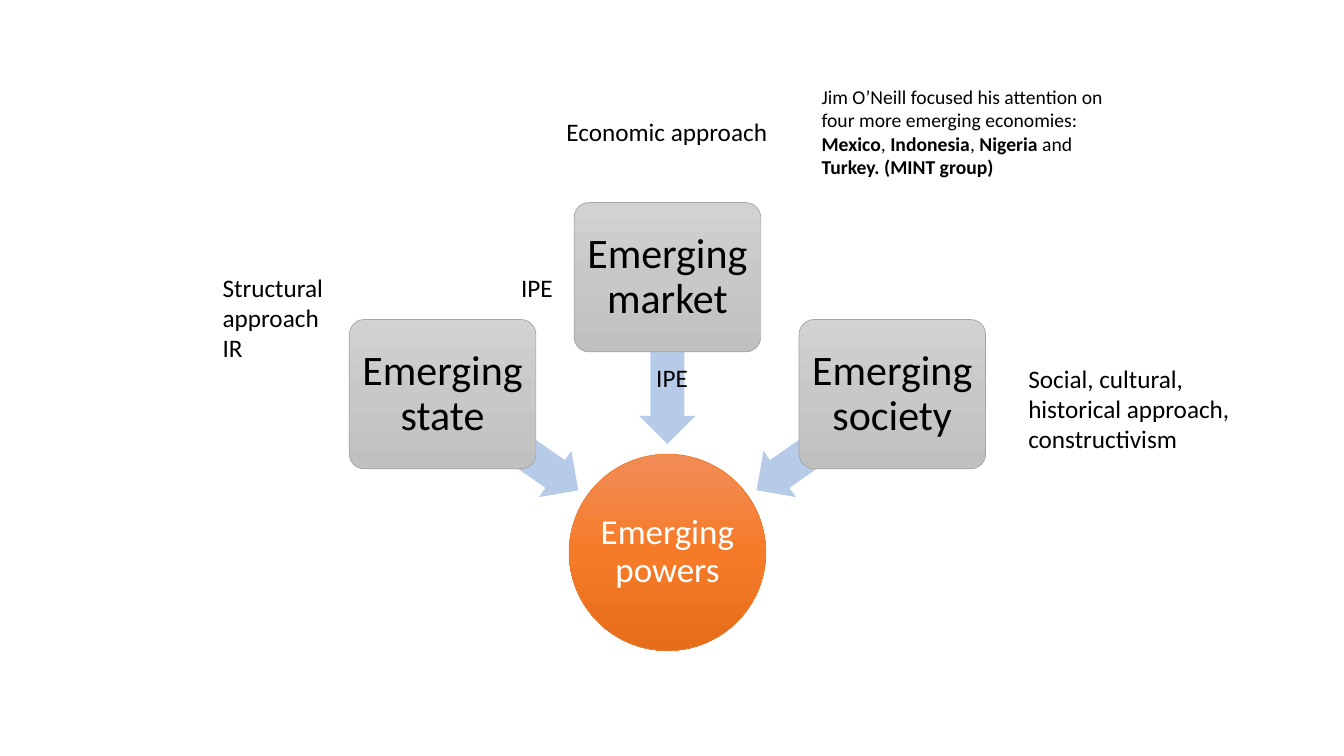
from copy import deepcopy

from pptx import Presentation
from pptx.dml.color import RGBColor
from pptx.enum.shapes import MSO_SHAPE as SHAPE
from pptx.enum.text import MSO_ANCHOR as ANCHOR, MSO_AUTO_SIZE as AUTO_SIZE, PP_ALIGN as ALIGN
from pptx.oxml.ns import qn
from pptx.util import Inches, Pt


def rgb(value):
    return RGBColor.from_string(value)


def add_text(p, text, size=18, color="000000", bold=False, font="Calibri"):
    r = p.add_run()
    r.text = text
    r.font.name = font
    r.font.size = Pt(size)
    r.font.bold = bold
    r.font.color.rgb = rgb(color)


class SlideBuilder:
    ORANGE = ("F18C57", "F67B28", "E56C19")
    GREY = ("D2D2D2", "C8C8C8", "C0C0C0")
    ARROW_BLUE = "B5CBE7"

    def __init__(self, slide):
        self.shapes = slide.shapes

    def shape(self, kind, center, extent):
        """Add a shadowless preset shape placed by its centre, in inches."""
        (cx, cy), (w, h) = center, extent
        sp = self.shapes.add_shape(kind, Inches(cx - w / 2), Inches(cy - h / 2),
                                   Inches(w), Inches(h))
        sp.shadow.inherit = False
        return sp

    def gradient(self, sp, colors):
        """Fill from top to bottom with three evenly spaced colours."""
        sp.fill.gradient()
        sp.fill.gradient_angle = 270
        stop_list = sp._element.spPr.find(qn("a:gradFill")).find(qn("a:gsLst"))
        stop_list.insert(1, deepcopy(stop_list[0]))
        for i, (stop, color) in enumerate(zip(sp.fill.gradient_stops, colors)):
            stop.position = i / 2
            stop.color.rgb = rgb(color)

    def node(self, kind, center, extent, label, colors, line, margin, **text_format):
        sp = self.shape(kind, center, extent)
        self.gradient(sp, colors)
        sp.line.color.rgb = rgb(line)
        sp.line.width = Pt(0.5)
        tf = sp.text_frame
        tf.word_wrap = True
        tf.vertical_anchor = ANCHOR.MIDDLE
        tf.margin_left = tf.margin_right = tf.margin_top = tf.margin_bottom = Inches(margin)
        p = tf.paragraphs[0]
        p.alignment = ALIGN.CENTER
        p.line_spacing = 0.9
        add_text(p, label, **text_format)
        return sp

    def circle(self, center, diameter, label):
        self.node(SHAPE.OVAL, center, (diameter, diameter), label, self.ORANGE,
                  "ED7D31", 0.02, size=25, color="FFFFFF")

    def box(self, center, label):
        sp = self.node(SHAPE.ROUNDED_RECTANGLE, center, (1.85, 1.48), label, self.GREY,
                       "A5A5A5", 0.06, size=30)
        sp.adjustments[0] = 0.1

    def arrow(self, center, rotation):
        sp = self.shape(SHAPE.LEFT_ARROW, center, (1.65, 0.56))
        sp.adjustments[0], sp.adjustments[1] = 0.6, 0.5
        sp.rotation = rotation
        sp.fill.solid()
        sp.fill.fore_color.rgb = rgb(self.ARROW_BLUE)
        sp.line.fill.background()

    def note(self, left, top, width, height, paragraphs, wrap=True, size=18):
        """Add a text box; each paragraph is a list of (text, bold) runs."""
        sp = self.shapes.add_textbox(Inches(left), Inches(top), Inches(width), Inches(height))
        tf = sp.text_frame
        tf.word_wrap = wrap
        tf.auto_size = AUTO_SIZE.SHAPE_TO_FIT_TEXT
        for i, runs in enumerate(paragraphs):
            p = tf.add_paragraph() if i else tf.paragraphs[0]
            for text, bold in runs:
                add_text(p, text, size=size, bold=bold)


def plain(*lines):
    return [[(line, False)] for line in lines]


def main():
    prs = Presentation()
    prs.slide_width, prs.slide_height = Inches(13.33), Inches(7.5)
    s = SlideBuilder(prs.slides.add_slide(prs.slide_layouts[6]))

    axis = 6.62
    s.circle((axis, 5.48), 1.95, "Emerging powers")
    branches = [
        ("Emerging state", -2.23, 3.91, -1.56, 4.39, 215),
        ("Emerging market", 0, 2.75, 0, 3.58, 270),
        ("Emerging society", 2.23, 3.91, 1.56, 4.39, 325),
    ]
    for label, box_dx, box_y, arrow_dx, arrow_y, rotation in branches:
        s.arrow((axis + arrow_dx, arrow_y), rotation)
        s.box((axis + box_dx, box_y), label)

    s.note(2.11, 2.65, 2.13, 1.01, plain("Structural approach", "IR"))
    s.note(5.52, 1.11, 2.2, 0.4, plain("Economic approach"))
    s.note(10.1, 3.55, 2.28, 1.01,
           plain("Social, cultural, historical approach, constructivism"))
    s.note(8.05, 0.79, 3.02, 1.04, [[
        ("Jim O’Neill focused his attention on four more emerging economies: ", False),
        ("Mexico", True), (", ", False), ("Indonesia", True), (", ", False),
        ("Nigeria", True), (" and ", False), ("Turkey. (MINT group)", True),
    ]], size=14)
    for left, top in ((6.41, 3.55), (5.07, 2.65)):
        s.note(left, top, 0.52, 0.4, plain("IPE"), wrap=False)

    prs.save("out.pptx")


if __name__ == "__main__":
    main()
